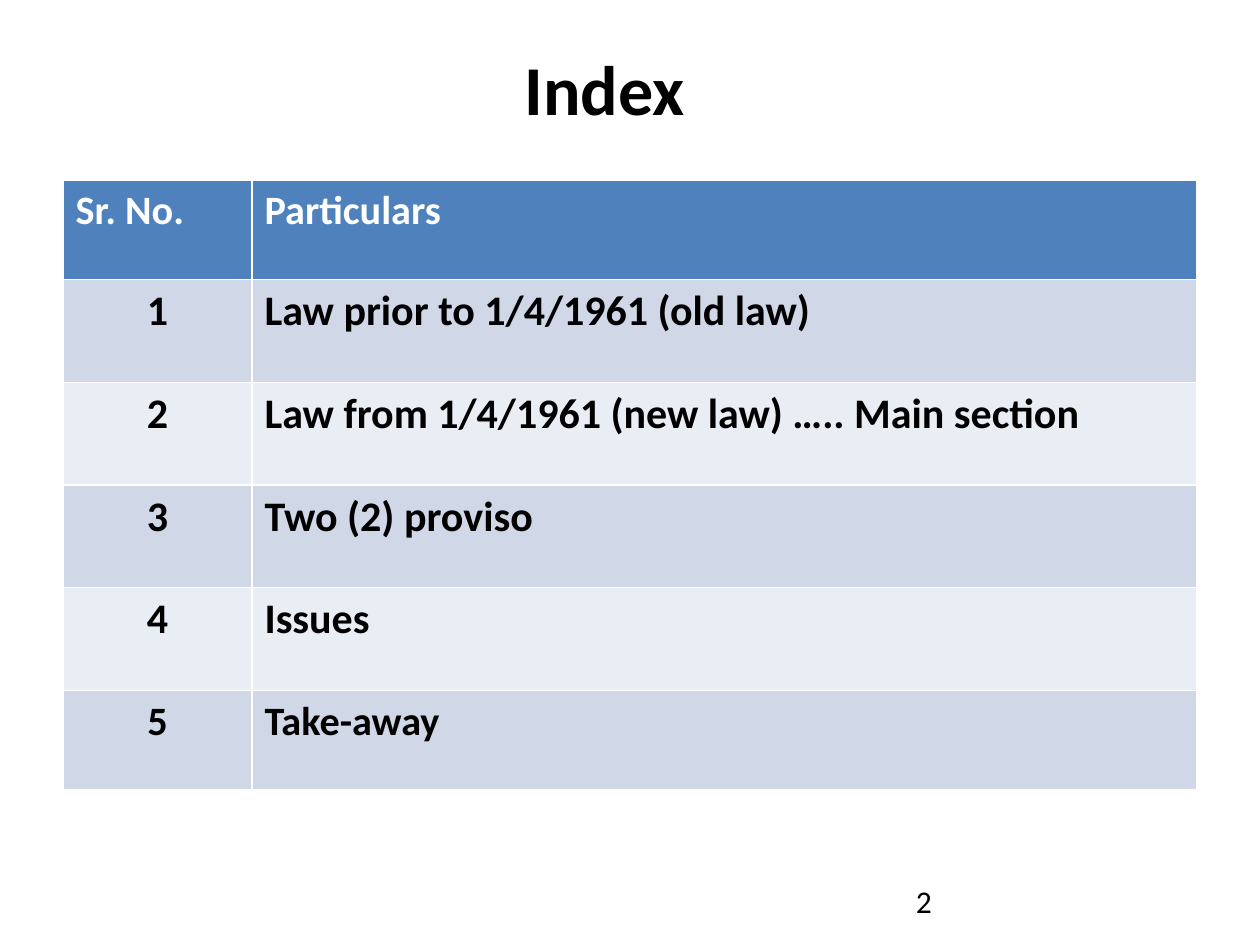
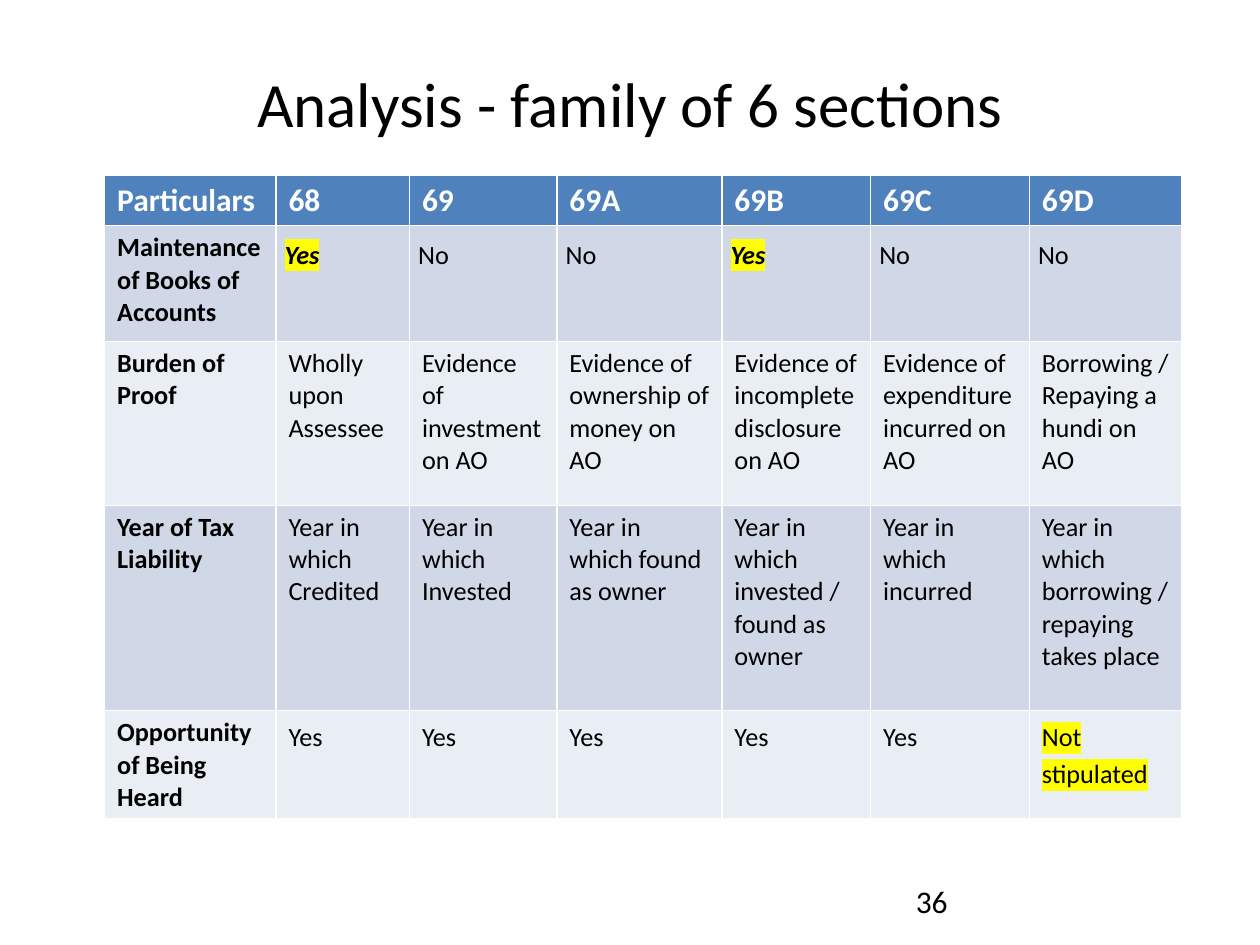
"""Build an index slide and a comparison slide of six tax sections."""
from lxml import etree
from pptx import Presentation
from pptx import util as u
from pptx.dml.color import RGBColor
from pptx.enum import text
from pptx.oxml.ns import qn

FONT = "Calibri"
BLACK = RGBColor(0x00, 0x00, 0x00)
WHITE = RGBColor(0xFF, 0xFF, 0xFF)
HEADER_BLUE = RGBColor(0x4F, 0x81, 0xBD)
BANDS = [RGBColor(0xD0, 0xD8, 0xE8), RGBColor(0xE9, 0xED, 0xF4)]
YELLOW = RGBColor(0xFF, 0xFF, 0x00)
ALIGN = text.PP_ALIGN

deck = Presentation()
deck.slide_width = u.Inches(10)
deck.slide_height = u.Inches(7.5)
COLUMN = deck.slide_width // 100
ROW = deck.slide_height // 75


def add_text(page, words, left, top, width, height, size, bold=False, align=ALIGN.LEFT):
    box = page.shapes.add_textbox(int(left * COLUMN), int(top * ROW), int(width * COLUMN), int(height * ROW))
    box.text_frame.word_wrap = True
    box.text_frame.text = words
    para = box.text_frame.paragraphs[0]
    para.alignment = align
    font = para.runs[0].font
    font.name, font.size, font.bold = FONT, u.Pt(size), bold
    font.color.rgb = BLACK


def add_grid(page, rows, left, top, widths, heights, header_size, body_size):
    frame = page.shapes.add_table(len(rows), len(widths), int(left * COLUMN), int(top * ROW),
                                  int(sum(widths) * COLUMN), int(sum(heights) * ROW))
    grid = frame.table
    for column, width in zip(grid.columns, widths):
        column.width = int(width * COLUMN)
    for r, (row, height) in enumerate(zip(rows, heights)):
        grid.rows[r].height = int(height * ROW)
        for c, words in enumerate(row):
            cell = grid.cell(r, c)
            cell.fill.solid()
            cell.fill.fore_color.rgb = BANDS[(r - 1) % 2] if r else HEADER_BLUE
            cell.text = words
            font = cell.text_frame.paragraphs[0].runs[0].font
            font.name, font.bold = FONT, True
            font.size = u.Pt(body_size if r else header_size)
            font.color.rgb = BLACK if r else WHITE
    return grid


index_rows = [
    ["Sr. No.", "Particulars"],
    ["1", "Law prior to 1/4/1961 (old law)"],
    ["2", "Law from 1/4/1961 (new law) ….. Main section"],
    ["3", "Two (2) proviso"],
    ["4", "Issues"],
    ["5", "Take-away"],
]
page = deck.slides.add_slide(deck.slide_layouts[6])
add_text(page, "Index", 3, 3.1, 90, 12.5, 40, True, ALIGN.CENTER)
index = add_grid(page, index_rows, 5, 14.3, [15, 75], [7.9] + [8.15] * 4 + [7.9], 23, 24)
for r in range(1, len(index_rows)):
    index.cell(r, 0).text_frame.paragraphs[0].alignment = ALIGN.CENTER
for cell in index.rows[len(index_rows) - 1].cells:
    cell.text_frame.paragraphs[0].runs[0].font.size = u.Pt(23)
add_text(page, "2", 71.7, 69.5, 23.3, 4, 18)

section_rows = [
    ["Particulars", "68", "69", "69A", "69B", "69C", "69D"],
    ["Maintenance of Books of Accounts", "Yes", "No", "No", "Yes", "No", "No"],
    ["Burden of Proof", "Wholly upon Assessee", "Evidence of investment on AO",
     "Evidence of ownership of money on AO", "Evidence of incomplete disclosure on AO",
     "Evidence of expenditure incurred on AO", "Borrowing / Repaying a hundi on AO"],
    ["Year of Tax Liability", "Year in which Credited", "Year in which Invested",
     "Year in which found as owner", "Year in which invested / found as owner",
     "Year in which incurred", "Year in which borrowing / repaying takes place"],
    ["Opportunity of Being Heard", "Yes", "Yes", "Yes", "Yes", "Yes", "Not stipulated"],
]
BOOKS_ROW, HEARD_ROW = 1, 4
highlighted = [(BOOKS_ROW, 1), (BOOKS_ROW, 4), (HEARD_ROW, 6)]

page = deck.slides.add_slide(deck.slide_layouts[6])
add_text(page, "Analysis - family of 6 sections", 5, 4.6, 90, 10.2, 36, False, ALIGN.CENTER)
add_text(page, "36", 71.7, 69.5, 23.3, 4, 18)
sections = add_grid(page, section_rows, 8.3, 13.9, [13.6, 10.6, 11.7, 13.1, 11.8, 12.6, 12.1],
                    [3.9, 9.2, 13, 16.3, 8.6], 18, 15)
for r in range(1, len(section_rows)):
    for c in range(1, len(section_rows[0])):
        cell = sections.cell(r, c)
        para = cell.text_frame.paragraphs[0]
        span = para.runs[0]
        span.font.bold = False
        if r in (BOOKS_ROW, HEARD_ROW):
            para.alignment = ALIGN.JUSTIFY
            para.line_spacing = 1.15
            para.space_after = u.Pt(10)
        if r == BOOKS_ROW:
            cell.margin_left = cell.margin_right = u.Inches(0.07)
            cell.margin_top = cell.margin_bottom = u.Inches(0.07)
        if (r, c) in highlighted:
            span.font.bold = span.font.italic = r == BOOKS_ROW
            highlight = etree.Element(qn("a:highlight"))
            etree.SubElement(highlight, qn("a:srgbClr")).set("val", str(YELLOW))
            span.font._element.find(qn("a:solidFill")).addnext(highlight)

deck.save("out.pptx")
